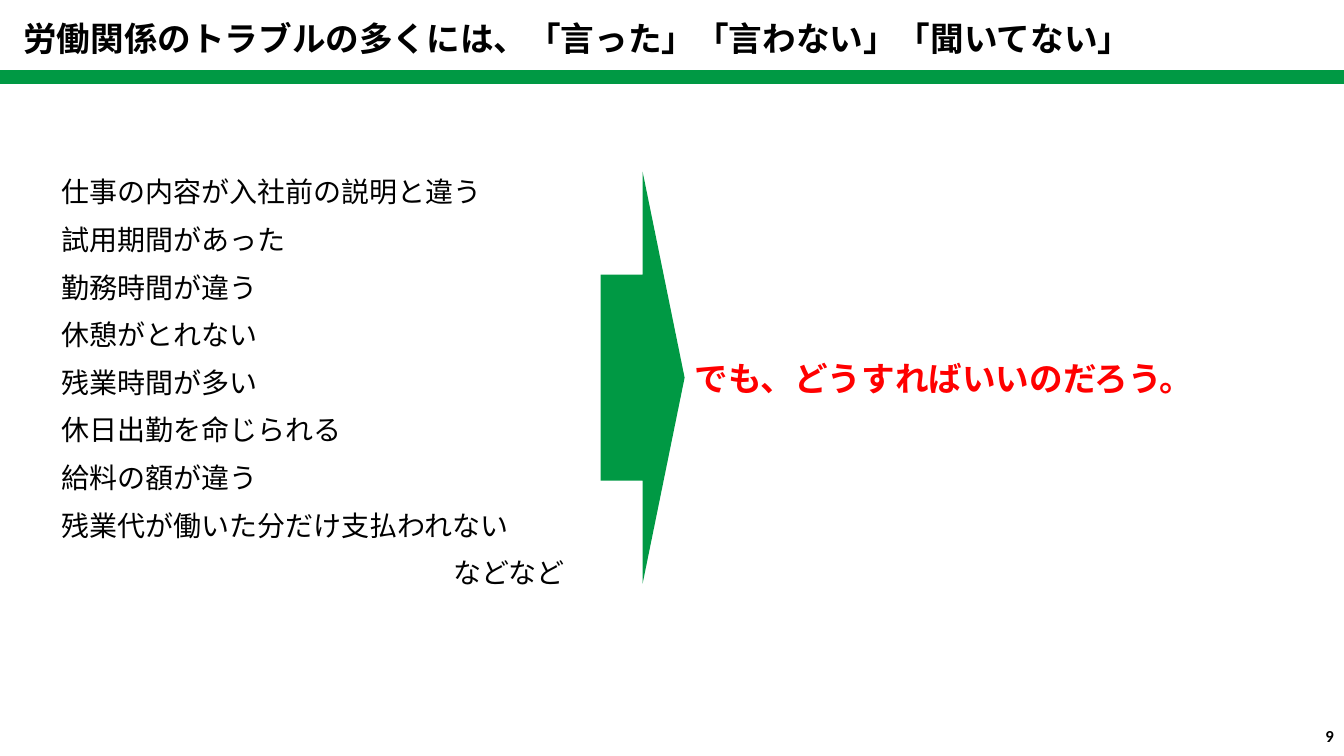
from dataclasses import dataclass

from lxml import etree
from pptx import Presentation
from pptx import util as u
from pptx.dml.color import RGBColor
from pptx.enum import shapes, text
from pptx.oxml import ns

GREEN, BLACK, RED = "009944", "000000", "FF0000"
JAPANESE, LATIN = "Noto Sans CJK JP", "Calibri"
SLIDE_WIDTH, SLIDE_HEIGHT = 960, 540

TITLE = "労働関係のトラブルの多くには、「言った」「言わない」「聞いてない」"
TROUBLES = [
    "仕事の内容が入社前の説明と違う",
    "試用期間があった",
    "勤務時間が違う",
    "休憩がとれない",
    "残業時間が多い",
    "休日出勤を命じられる",
    "給料の額が違う",
    "残業代が働いた分だけ支払われない",
]
AND_SO_ON = "などなど"
QUESTION = "でも、どうすればいいのだろう。"


@dataclass
class Box:
    left: float
    top: float
    width: float
    height: float

    def lengths(self) -> list:
        return [u.Pt(v) for v in (self.left, self.top, self.width, self.height)]


@dataclass
class Block:
    kind: shapes.MSO_SHAPE
    box: Box
    color: str


BLOCKS = [
    Block(shapes.MSO_SHAPE.RECTANGLE, Box(0, 50, SLIDE_WIDTH, 10), GREEN),
    Block(shapes.MSO_SHAPE.RIGHT_ARROW, Box(429, 122.5, 60, 294.5), GREEN),
]


def rgb(color: str) -> RGBColor:
    return RGBColor.from_string(color)


def place(shape, box: Box) -> None:
    shape.left, shape.top, shape.width, shape.height = box.lengths()


def prepare_frame(frame, anchor=text.MSO_ANCHOR.TOP, left=7.2, top=3.6) -> None:
    frame.word_wrap = True
    frame.auto_size = text.MSO_AUTO_SIZE.NONE
    frame.vertical_anchor = anchor
    frame.margin_left, frame.margin_right = u.Pt(left), u.Pt(3)
    frame.margin_top = frame.margin_bottom = u.Pt(top)


def write(paragraph, words: str, *, size=24, color=BLACK, bold=True,
          font=JAPANESE, align=text.PP_ALIGN.LEFT, line=None, indent=0) -> None:
    paragraph.alignment = align
    paragraph.space_before = u.Pt(0)
    if line:
        paragraph.line_spacing = u.Pt(line)
    # Indent without a bullet
    properties = paragraph._p.get_or_add_pPr()
    properties.set("marL", str(u.Pt(indent)))
    properties.set("indent", "0")
    etree.SubElement(properties, ns.qn("a:buNone"))

    run = paragraph.add_run()
    run.text = words
    run.font.name, run.font.size, run.font.bold = font, u.Pt(size), bold
    run.font.color.rgb = rgb(color)
    east_asian = etree.SubElement(run._r.get_or_add_rPr(), ns.qn("a:ea"))
    east_asian.set("typeface", font)


def add_block(slide, block: Block) -> None:
    shape = slide.shapes.add_shape(block.kind, *block.box.lengths())
    shape.shadow.inherit = False
    shape.fill.solid()
    shape.fill.fore_color.rgb = rgb(block.color)
    shape.line.fill.background()


def add_label(slide, box: Box, words: str, anchor=text.MSO_ANCHOR.TOP, **style) -> None:
    frame = slide.shapes.add_textbox(*box.lengths()).text_frame
    prepare_frame(frame, anchor)
    frame.margin_right = u.Pt(7.2)
    write(frame.paragraphs[0], words, **style)


def fill_troubles(body) -> None:
    place(body, Box(32.5, 95, 402.5, 347))
    frame = body.text_frame
    prepare_frame(frame, left=11.3, top=20)
    for index, trouble in enumerate(TROUBLES):
        paragraph = frame.add_paragraph() if index else frame.paragraphs[0]
        write(paragraph, trouble, size=20, bold=False, line=34)
    write(frame.add_paragraph(), AND_SO_ON, size=20, bold=False, line=34, indent=280)


def main() -> None:
    presentation = Presentation()
    presentation.slide_width = u.Pt(SLIDE_WIDTH)
    presentation.slide_height = u.Pt(SLIDE_HEIGHT)
    slide = presentation.slides.add_slide(presentation.slide_layouts[1])

    # Title and list of troubles
    title = slide.shapes.title
    place(title, Box(9.5, 9.5, 850, 36))
    prepare_frame(title.text_frame)
    write(title.text_frame.paragraphs[0], TITLE)
    fill_troubles(slide.placeholders[1])

    # Header bar and arrow
    for block in BLOCKS:
        add_block(slide, block)

    # Question and page number
    add_label(slide, Box(489, 252, 453.5, 36), QUESTION, color=RED)
    add_label(slide, Box(736, 511, 224, 29), "9", text.MSO_ANCHOR.MIDDLE,
              size=12, font=LATIN, align=text.PP_ALIGN.RIGHT)

    presentation.save("out.pptx")


if __name__ == "__main__":
    main()
